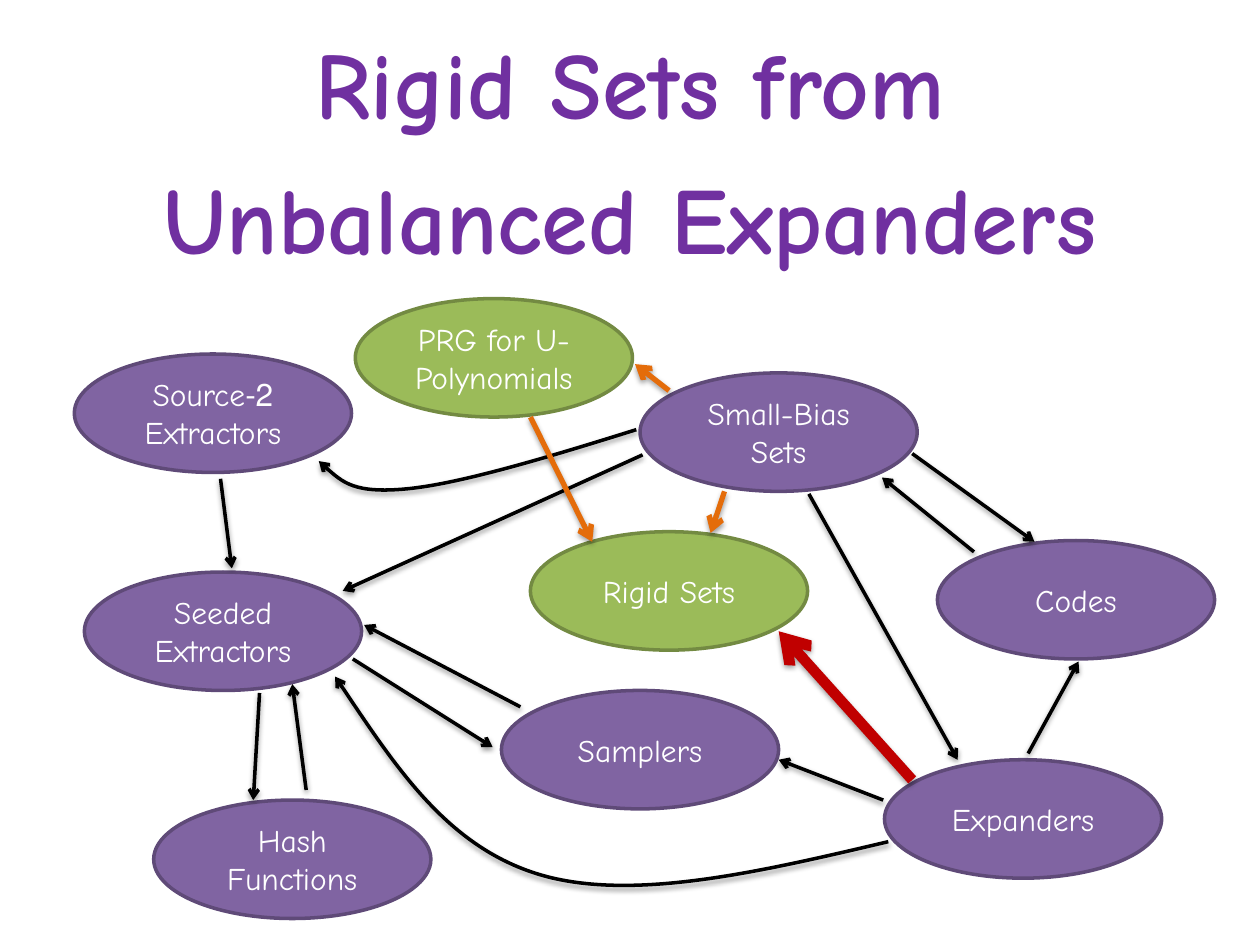
import pptx
import pptx.util
import pptx.dml.color
import pptx.enum.shapes
import pptx.enum.text
import pptx.oxml
import pptx.oxml.ns
from lxml import etree

Inches, Pt = pptx.util.Inches, pptx.util.Pt
qn = pptx.oxml.ns.qn

COLOURS = {
    "title": "7030A0", "white": "FFFFFF", "black": "000000",
    "purple": "8064A2", "purple edge": "5F4A78",
    "green": "9BBB59", "green edge": "738A42",
    "orange": "E46C0A", "red": "C00000",
}
FONT = "Comic Neue"
NODE_SIZE = (2.2, 0.94)

TITLE = ["Rigid Sets from", "Unbalanced Expanders"]
KNOWN_OBJECTS = [
    ("Expanders", 7.02, 6.03),
    ("Codes", 7.44, 4.29),
    ("Small-Bias Sets", 5.08, 2.96),
    ("Samplers", 3.98, 5.48),
    ("Seeded Extractors", 0.67, 4.54),
    ("Hash Functions", 1.22, 6.35),
    ("2-Source Extractors", 0.59, 2.81),
]
RIGID_OBJECTS = [
    ("PRG for U-Polynomials", 2.82, 2.37),
    ("Rigid Sets", 4.21, 4.22),
]
KNOWN_REDUCTIONS = [
    ((7.24, 3.6), (8.21, 4.3)),
    ((6.42, 3.92), (7.6, 6.03)),
    ((8.16, 5.98), (8.56, 5.25)),
    ((7.01, 6.35), (6.18, 6.03)),
    ((5.1, 3.61), (2.72, 4.69)),
    ((2.43, 6.27), (2.32, 5.43)),
    ((2.06, 5.5), (2.01, 6.35)),
    ((4.13, 5.61), (2.89, 4.96)),
    ((2.8, 5.23), (3.91, 5.93)),
    ((1.75, 3.8), (1.84, 4.51)),
    ((7.73, 4.38), (7, 3.79)),
]
CURVED_REDUCTIONS = [
    [(7.05, 6.68), (6.03, 6.92), (5.01, 7.16), (4.28, 6.94),
     (3.55, 6.72), (3.11, 6.04), (2.66, 5.37)],
    [(5.05, 3.41), (4.35, 3.63), (3.65, 3.84), (3.23, 3.88),
     (2.81, 3.92), (2.67, 3.79), (2.53, 3.66)],
]
RIGID_REDUCTIONS = [
    ((4.21, 3.31), (4.7, 4.3), "orange", 3),
    ((5.31, 3.1), (5.04, 2.89), "orange", 3),
    ((5.75, 3.9), (5.64, 4.23), "orange", 3),
    ((7.24, 6.19), (6.18, 5.01), "red", 6),
]


def rgb(name):
    return pptx.dml.color.RGBColor.from_string(COLOURS[name])


def write(paragraph, text, size=18, colour="white", bold=False, rtl=False, before=0):
    paragraph.alignment = pptx.enum.text.PP_ALIGN.CENTER
    paragraph.space_before = Pt(before)
    if rtl:
        paragraph._p.get_or_add_pPr().set("rtl", "1")
    run = paragraph.add_run()
    run.text = text
    run.font.name = FONT
    run.font.size = Pt(size)
    run.font.bold = bold
    run.font.color.rgb = rgb(colour)


def add_title(slide):
    title = slide.shapes.title
    title.left, title.top, title.width, title.height = map(Inches, (0.5, 0.15, 9, 1.84))
    frame = title.text_frame
    frame.word_wrap = False
    frame.auto_size = pptx.enum.text.MSO_AUTO_SIZE.NONE
    frame.vertical_anchor = pptx.enum.text.MSO_ANCHOR.TOP
    for index, line in enumerate(TITLE):
        paragraph = frame.add_paragraph() if index else frame.paragraphs[0]
        write(paragraph, line, size=54, colour="title", bold=True, before=12)


def add_node(slide, label, left, top, colour):
    node = slide.shapes.add_shape(
        pptx.enum.shapes.MSO_SHAPE.OVAL, *map(Inches, (left, top, *NODE_SIZE)))
    node.shadow.inherit = False
    node.fill.solid()
    node.fill.fore_color.rgb = rgb(colour)
    node.line.color.rgb = rgb(colour + " edge")
    node.line.width = Pt(2)
    node.text_frame.word_wrap = True
    node.text_frame.vertical_anchor = pptx.enum.text.MSO_ANCHOR.MIDDLE
    write(node.text_frame.paragraphs[0], label, rtl=True)


def style_arrow(arrow, colour, width):
    arrow.line.color.rgb = rgb(colour)
    arrow.line.width = Pt(width)
    etree.SubElement(arrow.line._get_or_add_ln(), qn("a:tailEnd"), type="arrow")
    properties = arrow._element.spPr
    effects = properties.find(qn("a:effectLst"))
    if effects is None:
        effects = etree.SubElement(properties, qn("a:effectLst"))
    shadow = etree.SubElement(
        effects, qn("a:outerShdw"), blurRad=str(Pt(3.1)), dist=str(Pt(1.6)),
        dir="5400000", rotWithShape="0")
    tint = etree.SubElement(shadow, qn("a:srgbClr"), val=COLOURS["black"])
    etree.SubElement(tint, qn("a:alpha"), val="38000")


def add_arrow(slide, start, end, colour="black", width=2):
    arrow = slide.shapes.add_connector(
        pptx.enum.shapes.MSO_CONNECTOR.STRAIGHT, *map(Inches, start + end))
    style_arrow(arrow, colour, width)


def add_curve(slide, points):
    start, *rest = [(Inches(x), Inches(y)) for x, y in points]
    builder = slide.shapes.build_freeform(*start)
    builder.add_line_segments(rest, close=False)
    curve = builder.convert_to_shape()
    curve.shadow.inherit = False
    curve.fill.background()
    outline = next(curve._element.iter(qn("a:path")))
    segments = outline.findall(qn("a:lnTo"))
    for first in range(0, len(segments), 3):
        bend = etree.SubElement(outline, qn("a:cubicBezTo"))
        for segment in segments[first:first + 3]:
            bend.append(segment[0])
            outline.remove(segment)
    style_arrow(curve, "black", 2)


def main():
    """Build the slide on rigid sets from unbalanced expanders."""
    deck = pptx.Presentation()
    deck.slide_width, deck.slide_height = Inches(10), Inches(7.5)
    slide = deck.slides.add_slide(deck.slide_layouts[5])
    add_title(slide)
    for node in KNOWN_OBJECTS:
        add_node(slide, *node, "purple")
    for reduction in KNOWN_REDUCTIONS:
        add_arrow(slide, *reduction)
    for points in CURVED_REDUCTIONS:
        add_curve(slide, points)
    for node in RIGID_OBJECTS:
        add_node(slide, *node, "green")
    for reduction in RIGID_REDUCTIONS:
        add_arrow(slide, *reduction)
    deck.save("out.pptx")


if __name__ == "__main__":
    main()
